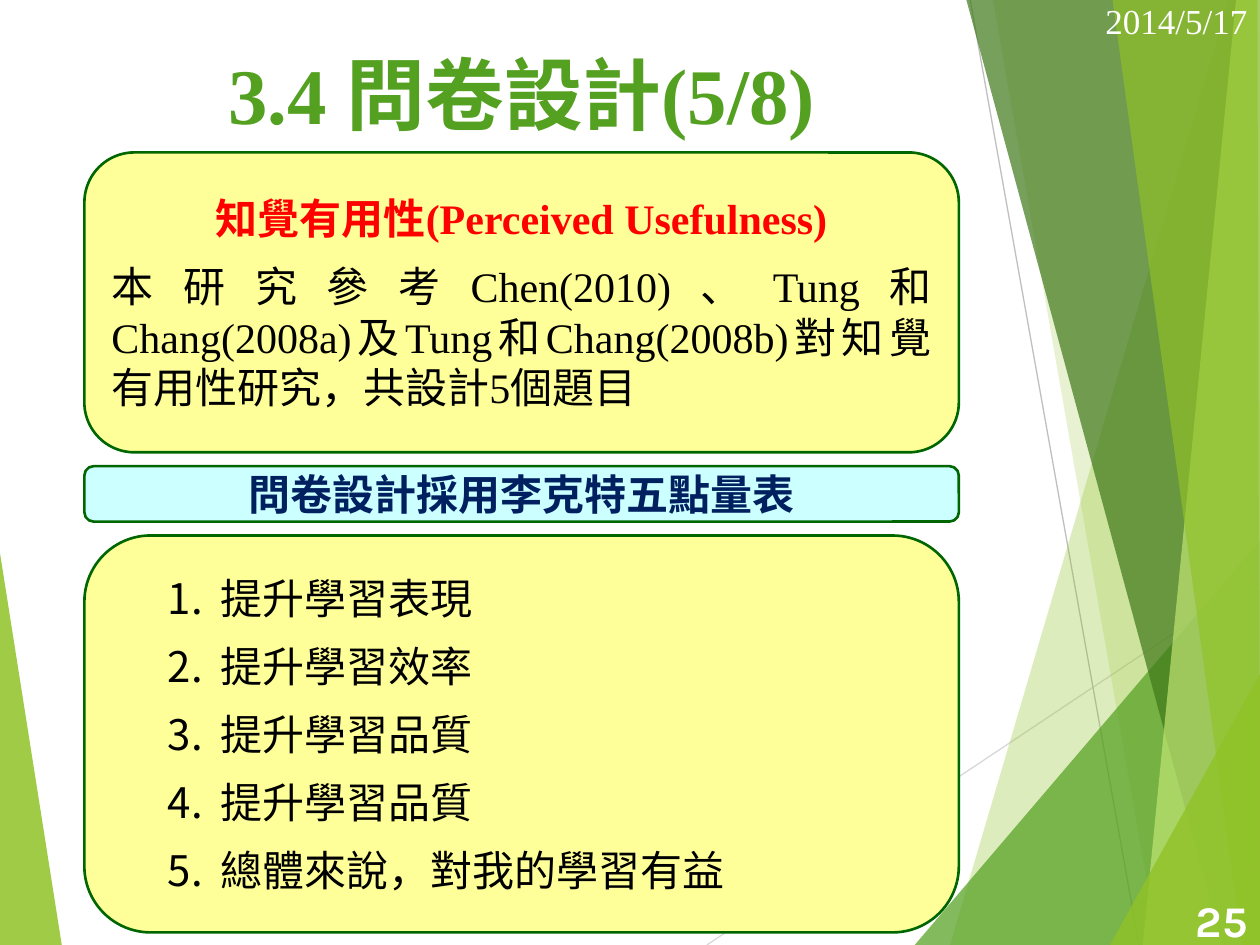
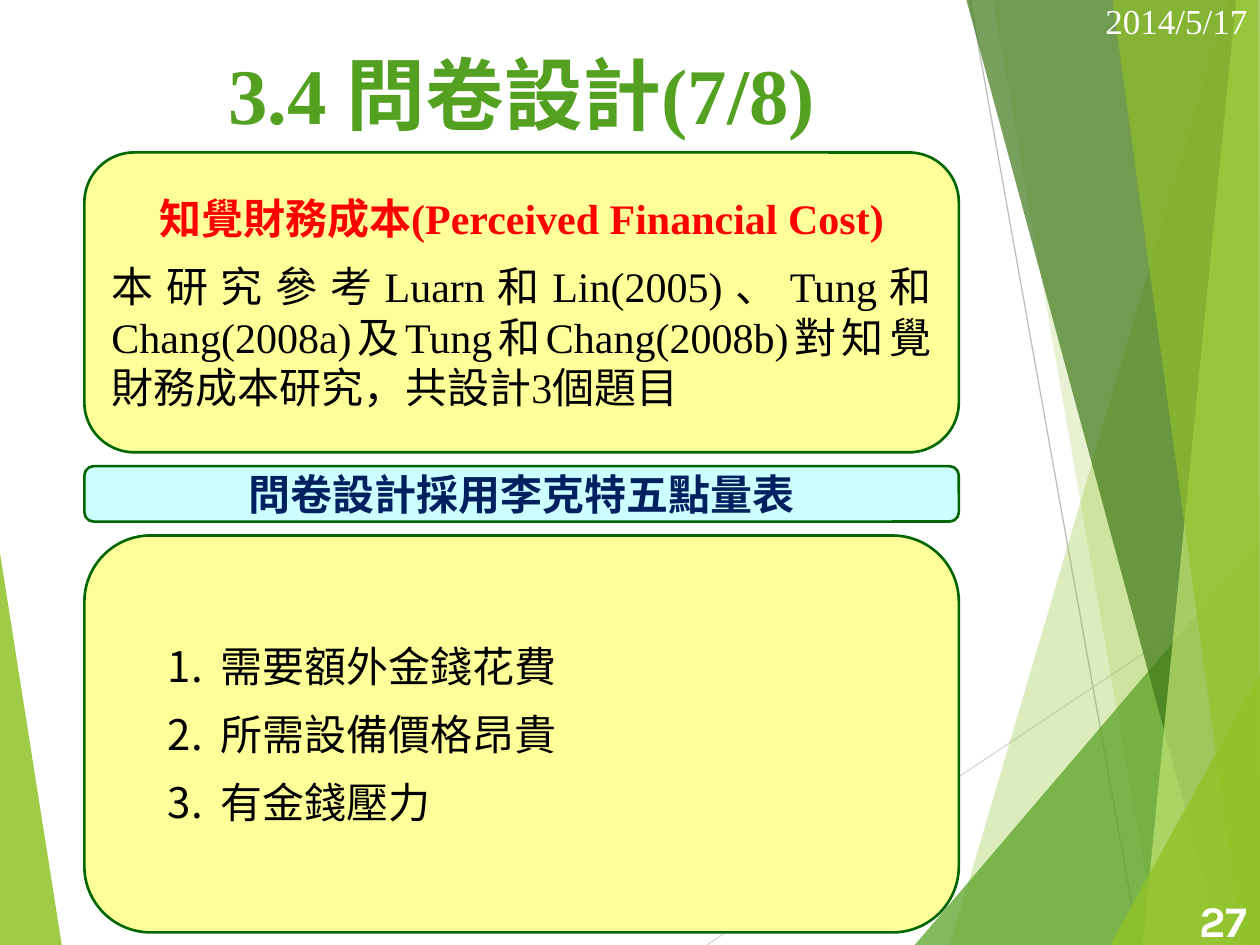
from lxml import etree
from pptx import Presentation
from pptx.dml.color import RGBColor
from pptx.enum.shapes import MSO_CONNECTOR, MSO_SHAPE
from pptx.enum.text import MSO_ANCHOR, PP_ALIGN
from pptx.oxml.ns import qn
from pptx.util import Inches, Pt

SLIDES = [
    {
        "title": "3.4 問卷設計(5/8)",
        "construct": "知覺有用性(Perceived Usefulness)",
        "basis": "本研究參考Chen(2010)、Tung和Chang(2008a)及Tung和Chang(2008b)"
                 "對知覺有用性研究，共設計5個題目",
        "questions": ["提升學習表現", "提升學習效率", "提升學習品質", "提升學習品質",
                      "總體來說，對我的學習有益"],
        "number": "25",
    },
    {
        "title": "3.4 問卷設計(7/8)",
        "construct": "知覺財務成本(Perceived Financial Cost)",
        "basis": "本研究參考Luarn和Lin(2005)、Tung和Chang(2008a)及Tung和Chang(2008b)"
                 "對知覺財務成本研究，共設計3個題目",
        "questions": ["需要額外金錢花費", "所需設備價格昂貴", "有金錢壓力"],
        "number": "27",
    },
]
SCALE = "問卷設計採用李克特五點量表"
DATE = "2014/5/17"

SERIF, SANS = "Times New Roman", "Karla"
GREEN, LIME, WHITE, BLACK = "54A021", "90C226", "FFFFFF", "000000"
YELLOW, CYAN, BORDER, RED, NAVY = "FFFF99", "CCFFFF", "006600", "FF0000", "002060"

WIDTH, HEIGHT = 10, 7.5
PANEL_LEFT, PANEL_WIDTH, PANEL_TOP, PANEL_GAP = 0.67, 6.94, 1.21, 0.11
CONSTRUCT_HEIGHT, SCALE_HEIGHT, QUESTIONS_HEIGHT = 2.38, 0.44, 3.15

# Facets: colour, opacity in percent, corners
LEFT_FACET = (LIME, 85, [(0, 4.39), (0.49, HEIGHT), (0, HEIGHT)])
RAYS = [("D9D9D9", (5.61, HEIGHT), (WIDTH, 4.57)),
        ("BFBFBF", (7.7, 0), (9.04, HEIGHT))]
RIGHT_FACETS = [
    (LIME, 30, [(9.75, 0), (7.54, HEIGHT), (WIDTH, HEIGHT), (WIDTH, 0)]),
    (LIME, 20, [(7.88, 0), (9.19, HEIGHT), (WIDTH, HEIGHT), (WIDTH, 0)]),
    (GREEN, 72, [(7.26, HEIGHT), (WIDTH, 4.29), (WIDTH, HEIGHT)]),
    ("3F7819", 70, [(7.67, 0), (9.7, HEIGHT), (WIDTH, HEIGHT), (WIDTH, 0)]),
    ("C0E474", 70, [(9.81, 0), (9.07, HEIGHT), (WIDTH, HEIGHT), (WIDTH, 0)]),
    (LIME, 65, [(8.83, 0), (9.86, HEIGHT), (WIDTH, HEIGHT), (9.98, 0)]),
    (LIME, 80, [(8.81, HEIGHT), (WIDTH, 5.35), (WIDTH, HEIGHT)]),
]


def rgb(color):
    return RGBColor.from_string(color)


def add_facet(slide, color, opacity, corners):
    points = [(Inches(x), Inches(y)) for x, y in corners]
    builder = slide.shapes.build_freeform(*points[0])
    builder.add_line_segments(points[1:], close=True)
    facet = builder.convert_to_shape()
    facet.shadow.inherit = False
    facet.line.fill.background()
    facet.fill.solid()
    facet.fill.fore_color.rgb = rgb(color)
    fill_color = facet.fill._xPr.find(qn("a:solidFill"))[0]
    etree.SubElement(fill_color, qn("a:alpha"), val=str(opacity * 1000))


def add_ray(slide, color, start, end):
    ray = slide.shapes.add_connector(
        MSO_CONNECTOR.STRAIGHT, *(Inches(value) for value in start + end))
    ray.line.color.rgb = rgb(color)
    ray.line.width = Pt(0.75)
    etree.SubElement(ray._element.spPr, qn("a:effectLst"))


def add_background(slide):
    add_facet(slide, *LEFT_FACET)
    for ray in RAYS:
        add_ray(slide, *ray)
    for facet in RIGHT_FACETS:
        add_facet(slide, *facet)


def write(shape, lines, size, font=SERIF, space_before=0):
    """Fill a shape with lines of (text, alignment, colour, bold)."""
    frame = shape.text_frame
    frame.word_wrap = True
    frame.vertical_anchor = MSO_ANCHOR.MIDDLE
    for index, (text, alignment, color, bold) in enumerate(lines):
        paragraph = frame.add_paragraph() if index else frame.paragraphs[0]
        paragraph.text = text
        paragraph.alignment = alignment
        paragraph.space_before = Pt(space_before)
        paragraph.font.name = font
        paragraph.font.size = Pt(size)
        paragraph.font.bold = bold
        paragraph.font.color.rgb = rgb(color)


def add_label(slide, box, line, size, font=SERIF):
    label = slide.shapes.add_textbox(*(Inches(value) for value in box))
    write(label, [line], size, font)


def add_panel(slide, top, height, fill, lines):
    panel = slide.shapes.add_shape(
        MSO_SHAPE.ROUNDED_RECTANGLE, Inches(PANEL_LEFT), Inches(top),
        Inches(PANEL_WIDTH), Inches(height))
    panel.shadow.inherit = False
    panel.fill.solid()
    panel.fill.fore_color.rgb = rgb(fill)
    panel.line.color.rgb = rgb(BORDER)
    panel.line.width = Pt(1.5)
    write(panel, lines, 24, space_before=10)
    return panel


def number_paragraphs(shape):
    for paragraph in shape.text_frame.paragraphs:
        properties = paragraph._p.get_or_add_pPr()
        properties.set("marL", str(Inches(0.83)))
        properties.set("indent", str(-Inches(0.42)))
        bullet = [etree.Element(qn("a:buClr")),
                  etree.Element(qn("a:buFont"), typeface=SERIF),
                  etree.Element(qn("a:buAutoNum"), type="arabicPeriod")]
        etree.SubElement(bullet[0], qn("a:srgbClr"), val=BLACK)
        default_font = properties.find(qn("a:defRPr"))
        for element in bullet:
            default_font.addprevious(element)


def add_survey_slide(presentation, content):
    slide = presentation.slides.add_slide(presentation.slide_layouts[6])
    add_background(slide)
    add_label(slide, (PANEL_LEFT, 0.36, PANEL_WIDTH, 0.75),
              (content["title"], PP_ALIGN.CENTER, GREEN, True), 45)

    top = PANEL_TOP
    add_panel(slide, top, CONSTRUCT_HEIGHT, YELLOW, [
        (content["construct"], PP_ALIGN.CENTER, RED, True),
        (content["basis"], PP_ALIGN.JUSTIFY, BLACK, False)])
    top += CONSTRUCT_HEIGHT + PANEL_GAP
    add_panel(slide, top, SCALE_HEIGHT, CYAN,
              [(SCALE, PP_ALIGN.CENTER, NAVY, True)])
    top += SCALE_HEIGHT + PANEL_GAP
    questions = add_panel(slide, top, QUESTIONS_HEIGHT, YELLOW, [
        (question, PP_ALIGN.JUSTIFY, BLACK, False)
        for question in content["questions"]])
    number_paragraphs(questions)

    add_label(slide, (9.25, 7.1, 0.75, 0.4),
              (content["number"], PP_ALIGN.RIGHT, WHITE, True), 25, SANS)
    add_label(slide, (8.67, -0.04, 1.33, 0.4),
              (DATE, PP_ALIGN.RIGHT, WHITE, False), 20)


def main():
    presentation = Presentation()
    presentation.slide_width = Inches(WIDTH)
    presentation.slide_height = Inches(HEIGHT)
    for content in SLIDES:
        add_survey_slide(presentation, content)
    presentation.save("out.pptx")


if __name__ == "__main__":
    main()
